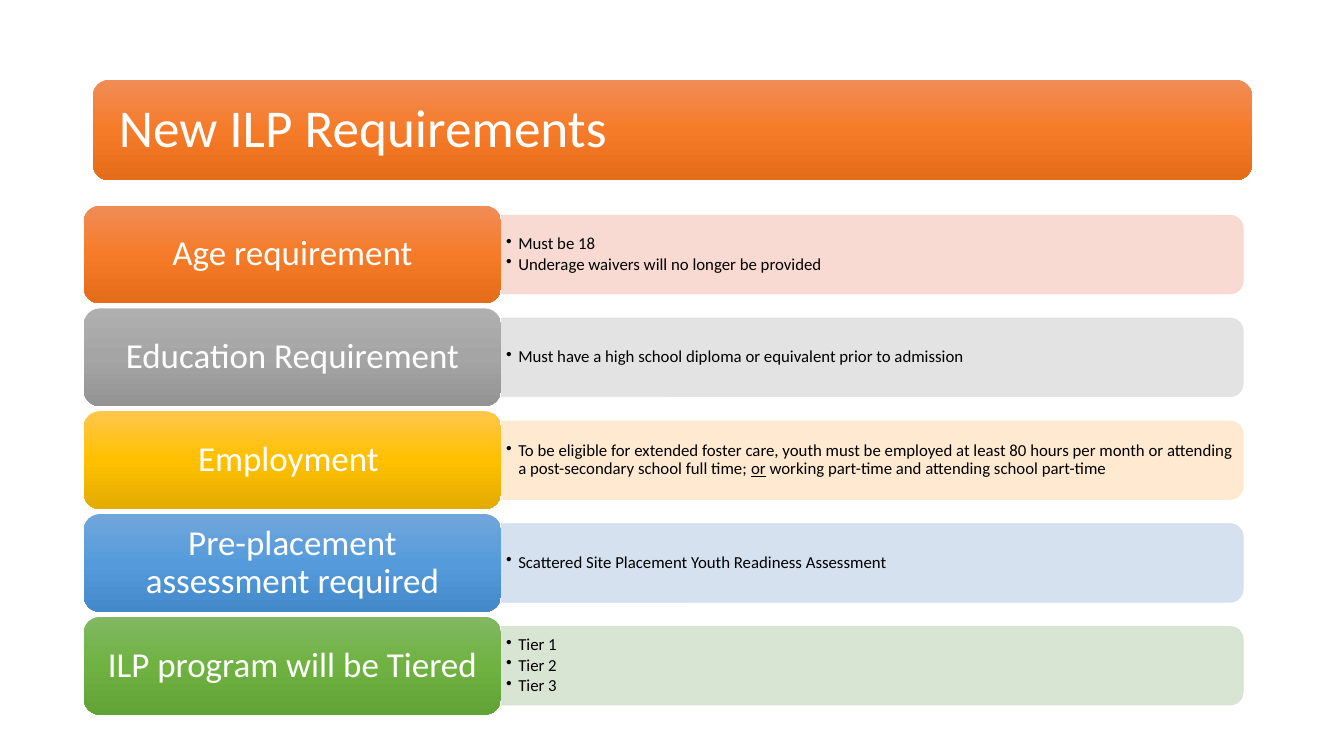
from copy import deepcopy
from dataclasses import dataclass

from lxml.etree import SubElement
from pptx import Presentation
from pptx.dml.color import RGBColor
from pptx.enum.shapes import MSO_SHAPE as Preset
from pptx.enum.text import MSO_ANCHOR as Anchor, PP_ALIGN as Align
from pptx.oxml.ns import qn
from pptx.util import Inches, Pt


@dataclass(frozen=True)
class Theme:
    font: str = "Calibri"
    title_size: int = 38
    label_size: int = 25
    detail_size: int = 12
    light: str = "FFFFFF"
    dark: str = "000000"
    orange: tuple = ("F18C57", "F67B28", "E56C19")
    gray: tuple = ("AFAFAF", "A5A5A5", "939393")
    gold: tuple = ("FFC64B", "FFC000", "E3AB00")
    blue: tuple = ("71A6DB", "559BDB", "448ACA")
    green: tuple = ("81B861", "6FB242", "62A336")
    pale_orange: str = "F8D7CE"
    pale_gray: str = "E1E1E1"
    pale_gold: str = "FFE8CC"
    pale_blue: str = "D2DEEF"
    pale_green: str = "D5E3CF"


class SlideBuilder:
    """Draws the slide's elements in one theme."""

    def __init__(self, slide, theme):
        self.slide = slide
        self.theme = theme

    def add_shape(self, preset, left, top, width, height):
        shape = self.slide.shapes.add_shape(
            preset, Inches(left), Inches(top), Inches(width), Inches(height))
        shape.shadow.inherit = False
        return shape

    def prepare_frame(self, shape, side, edge):
        frame = shape.text_frame
        frame.word_wrap = True
        frame.vertical_anchor = Anchor.MIDDLE
        frame.margin_left = frame.margin_right = Inches(side)
        frame.margin_top = frame.margin_bottom = Inches(edge)
        return frame

    def style_run(self, run, size, color):
        run.font.name = self.theme.font
        run.font.size = Pt(size)
        run.font.color.rgb = RGBColor.from_string(color)

    def add_block(self, text, box, colors, size, align, side):
        shape = self.add_shape(Preset.ROUNDED_RECTANGLE, *box)
        shape.line.fill.background()
        shape.fill.gradient()
        shape.fill.gradient_angle = 270
        stop_list = shape._element.spPr.find(qn("a:gradFill")).find(qn("a:gsLst"))
        stop_list.append(deepcopy(stop_list[0]))
        for index, (stop, color) in enumerate(zip(shape.fill.gradient_stops, colors)):
            stop.position = index / 2
            stop.color.rgb = RGBColor.from_string(color)
        frame = self.prepare_frame(shape, side, 0.1)
        frame.text = text
        paragraph = frame.paragraphs[0]
        paragraph.alignment = align
        paragraph.line_spacing = 0.9
        self.style_run(paragraph.runs[0], size, self.theme.light)

    def add_bar(self, left, middle, length, thickness, color):
        shape = self.add_shape(
            Preset.ROUND_2_SAME_RECTANGLE, left + (length - thickness) / 2,
            middle - length / 2, thickness, length)
        shape.rotation = 90
        shape.fill.solid()
        shape.line.width = Pt(0.5)
        for paint in (shape.fill.fore_color, shape.line.color):
            paint.rgb = RGBColor.from_string(color)
        for tint in shape._element.spPr.iter(qn("a:srgbClr")):
            SubElement(tint, qn("a:alpha")).set("val", "90000")

    def add_bullets(self, left, middle, width, height, lines):
        """Write bulleted lines, underlining the words set between underscores."""
        box = self.slide.shapes.add_textbox(
            Inches(left), Inches(middle - height / 2), Inches(width), Inches(height))
        frame = self.prepare_frame(box, 0.05, 0.03)
        for index, line in enumerate(lines):
            paragraph = frame.add_paragraph() if index else frame.paragraphs[0]
            paragraph.line_spacing = 0.9
            paragraph.space_after = Pt(1.8)
            properties = paragraph._p.get_or_add_pPr()
            properties.set("marL", str(Inches(0.12)))
            properties.set("indent", str(Inches(-0.12)))
            SubElement(properties, qn("a:buChar")).set("char", "•")
            first, *others = line.split("_")
            paragraph.text = first
            for piece in others:
                paragraph.add_run().text = piece
            for position, run in enumerate(paragraph.runs):
                self.style_run(run, self.theme.detail_size, self.theme.dark)
                if position % 2:
                    run.font.underline = True


def main():
    presentation = Presentation()
    presentation.slide_width = Inches(13.33)
    presentation.slide_height = Inches(7.5)
    slide = presentation.slides.add_slide(presentation.slide_layouts[6])
    theme = Theme()
    builder = SlideBuilder(slide, theme)

    builder.add_block("New ILP Requirements", (0.92, 0.79, 11.5, 1),
                      theme.orange, theme.title_size, Align.LEFT, 0.21)

    requirements = [
        ("Age requirement", theme.orange, theme.pale_orange,
         ["Must be 18", "Underage waivers will no longer be provided"]),
        ("Education Requirement", theme.gray, theme.pale_gray,
         ["Must have a high school diploma or equivalent prior to admission"]),
        ("Employment ", theme.gold, theme.pale_gold,
         ["To be eligible for extended foster care, youth must be employed at least "
          "80 hours per month or attending a post-secondary school full time; _or_ "
          "working part-time and attending school part-time"]),
        ("Pre-placement assessment required", theme.blue, theme.pale_blue,
         ["Scattered Site Placement Youth Readiness Assessment"]),
        ("ILP program will be Tiered", theme.green, theme.pale_green,
         ["Tier 1", "Tier 2", "Tier 3"]),
    ]
    label_left, label_width, label_height = 0.83, 4.14, 0.97
    first_top, pitch = 2.04, 1.02
    bar_left = label_left + label_width
    for row, (label, colors, pale, lines) in enumerate(requirements):
        top = first_top + row * pitch
        middle = top + label_height / 2
        builder.add_bar(bar_left, middle, 7.36, 0.78, pale)
        builder.add_bullets(bar_left, middle, 7.32, 0.7, lines)
        builder.add_block(label, (label_left, top, label_width, label_height),
                          colors, theme.label_size, Align.CENTER, 0.15)

    presentation.save("out.pptx")


if __name__ == "__main__":
    main()
